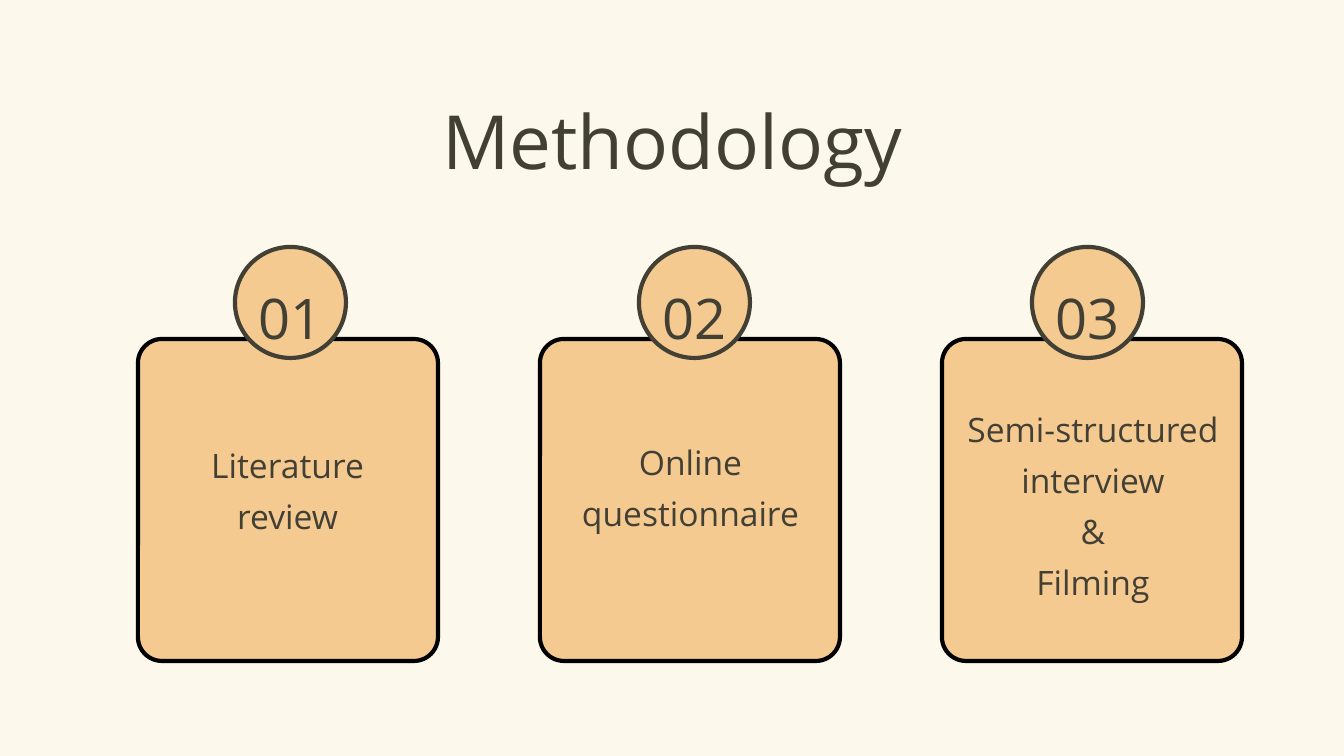
from dataclasses import dataclass

from pptx import Presentation
from pptx.dml.color import RGBColor
from pptx.enum.shapes import MSO_SHAPE as Shape
from pptx.enum.text import MSO_ANCHOR as Anchor, MSO_AUTO_SIZE as AutoSize, PP_ALIGN as Align
from pptx.util import Pt


@dataclass(frozen=True)
class Theme:
    background: RGBColor = RGBColor.from_string("FCF8EB")
    fill: RGBColor = RGBColor.from_string("F4CA91")
    ink: RGBColor = RGBColor.from_string("423F34")
    outline: RGBColor = RGBColor.from_string("000000")
    font: str = "Open Sans"
    title: int = 40
    number: int = 30
    label: int = 18
    spacing: float = 1.27
    line: float = 2.25


theme = Theme()
SCALE = 914400 / 134.4


def place(*lengths):
    return [round(length * SCALE) for length in lengths]


def write(text, box, size):
    frame = box.text_frame
    frame.word_wrap = True
    frame.auto_size = AutoSize.SHAPE_TO_FIT_TEXT
    frame.vertical_anchor = Anchor.TOP
    frame.margin_left = frame.margin_top = frame.margin_right = frame.margin_bottom = 0
    frame.text = text
    for para in frame.paragraphs:
        para.alignment = Align.CENTER
        para.line_spacing = theme.spacing
        for span in para.runs:
            span.font.name = theme.font
            span.font.size = Pt(size)
            span.font.color.rgb = theme.ink


deck = Presentation()
deck.slide_width, deck.slide_height = place(1344, 756)
page = deck.slides.add_slide(deck.slide_layouts[5])
page.background.fill.solid()
page.background.fill.fore_color.rgb = theme.background

title = page.shapes.title
title.left, title.top, title.width, title.height = place(75, 71, 1194, 90)
write("Methodology", title, theme.title)

steps = [
    ("Literature review", (159, 434, 257, 93), 235),
    ("Online questionnaire", (562, 431, 257, 93), 639),
    ("Semi-structured interview\n&\nFilming", (943, 398, 300, 196), 1032),
]

for index, (label, label_area, badge_left) in enumerate(steps):
    card = page.shapes.add_shape(Shape.ROUNDED_RECTANGLE, *place(138 + 402 * index, 339, 300, 322))
    card.adjustments[0] = 0.08
    badge = page.shapes.add_shape(Shape.OVAL, *place(badge_left, 247, 111, 111))
    for shape, outline in ((card, theme.outline), (badge, theme.ink)):
        shape.shadow.inherit = False
        shape.fill.solid()
        shape.fill.fore_color.rgb = theme.fill
        shape.line.color.rgb = outline
        shape.line.width = Pt(theme.line)

    write(label, page.shapes.add_textbox(*place(*label_area)), theme.label)
    number = page.shapes.add_textbox(*place(badge_left + 15, 265, 82, 67))
    write(f"{index + 1:02}", number, theme.number)

deck.save("out.pptx")
